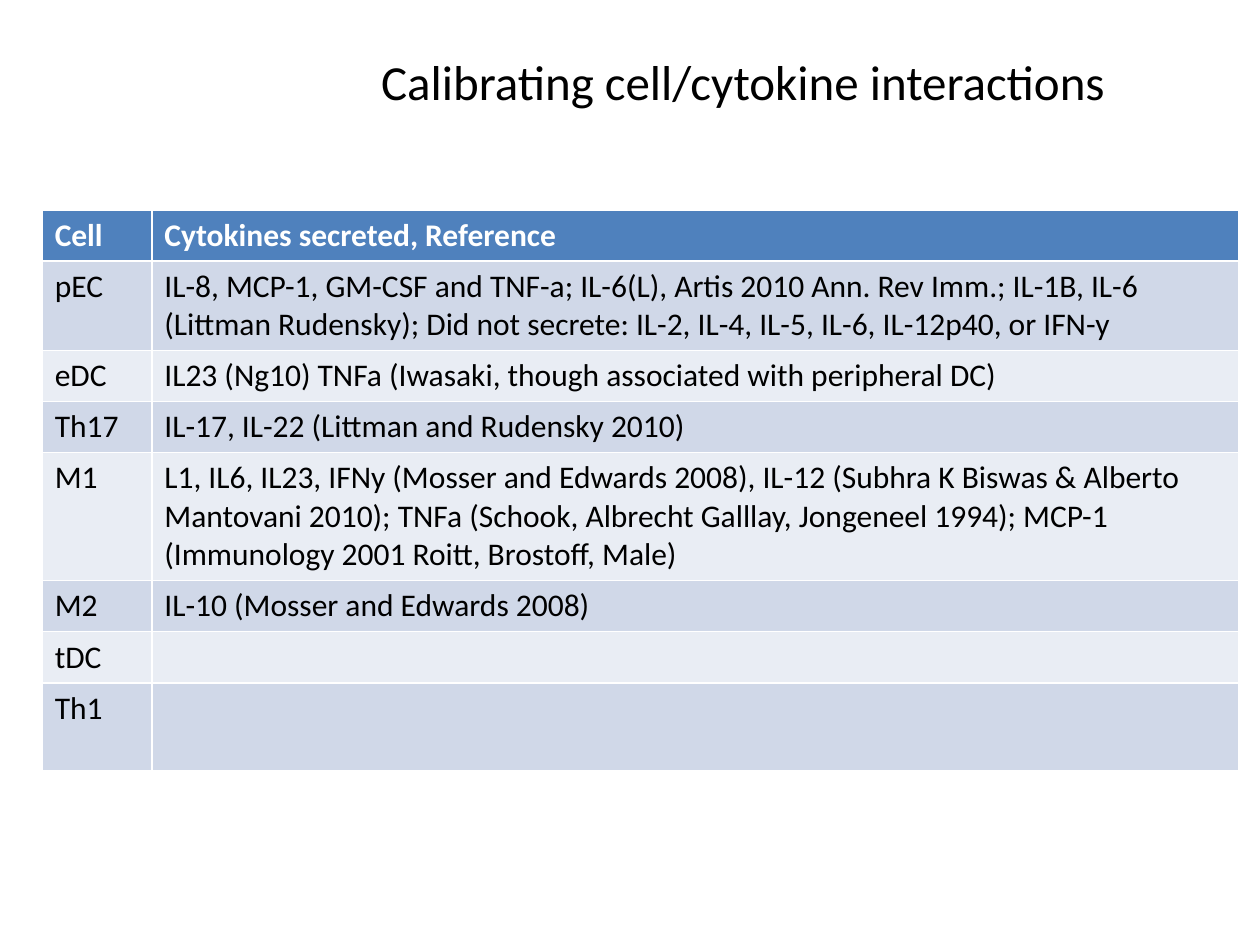
import pptx
import pptx.util
import pptx.dml.color
import pptx.enum.text

Cm = pptx.util.Cm
BLACK = pptx.dml.color.RGBColor(0x00, 0x00, 0x00)
WHITE = pptx.dml.color.RGBColor(0xFF, 0xFF, 0xFF)
HEADER_BLUE = pptx.dml.color.RGBColor(0x4F, 0x81, 0xBD)
BAND_DARK = pptx.dml.color.RGBColor(0xD0, 0xD8, 0xE8)
BAND_LIGHT = pptx.dml.color.RGBColor(0xE9, 0xED, 0xF4)


def add_run(paragraph, text, size, color, bold=False):
    run = paragraph.add_run()
    run.text = text
    run.font.name = "Calibri"
    run.font.size = pptx.util.Pt(size)
    run.font.bold = bold
    run.font.color.rgb = color


presentation = pptx.Presentation()
presentation.slide_width = Cm(25.4)
presentation.slide_height = Cm(19.05)
slide = presentation.slides.add_slide(presentation.slide_layouts[5])

title = slide.shapes.title
title.left, title.top = Cm(4.55), Cm(0.05)
title.width, title.height = Cm(20.85), Cm(3.18)
title.text_frame.vertical_anchor = pptx.enum.text.MSO_ANCHOR.MIDDLE
title_paragraph = title.text_frame.paragraphs[0]
title_paragraph.alignment = pptx.enum.text.PP_ALIGN.CENTER
add_run(title_paragraph, "Calibrating cell/cytokine interactions", 28, BLACK)

rows = [
    (0.94, "Cell", "Cytokines secreted, Reference"),
    (1.6, "pEC", "IL-8, MCP-1, GM-CSF and TNF-a; IL-6(L), Artis 2010 Ann. Rev Imm.; "
     "IL-1B, IL-6 (Littman Rudensky); Did not secrete: IL-2, IL-4, IL-5, IL-6, "
     "IL-12p40, or IFN-y"),
    (0.94, "eDC", "IL23 (Ng10) TNFa (Iwasaki, though associated with peripheral DC)"),
    (0.94, "Th17", "IL-17, IL-22 (Littman and Rudensky 2010)"),
    (2.29, "M1", "L1, IL6, IL23, IFNy (Mosser and Edwards 2008), IL-12 (Subhra K Biswas "
     "& Alberto Mantovani 2010); TNFa (Schook, Albrecht Galllay, Jongeneel 1994); "
     "MCP-1 (Immunology 2001 Roitt, Brostoff, Male)"),
    (0.94, "M2", "IL-10 (Mosser and Edwards 2008)"),
    (0.94, "tDC", ""),
    (1.78, "Th1", ""),
]

table_height = sum(row[0] for row in rows)
table = slide.shapes.add_table(
    len(rows), 2, Cm(0.85), Cm(4.23), Cm(24.13), Cm(table_height)
).table
table.columns[0].width = Cm(2.21)
table.columns[1].width = Cm(21.92)

for row_index, (height, *texts) in enumerate(rows):
    table.rows[row_index].height = Cm(height)
    is_header = row_index == 0
    band = BAND_DARK if row_index % 2 else BAND_LIGHT
    for column_index, text in enumerate(texts):
        cell = table.cell(row_index, column_index)
        cell.fill.solid()
        cell.fill.fore_color.rgb = HEADER_BLUE if is_header else band
        paragraph = cell.text_frame.paragraphs[0]
        if text:
            add_run(paragraph, text, 18, WHITE if is_header else BLACK, is_header)
        else:
            paragraph.font.size = pptx.util.Pt(18)

presentation.save("out.pptx")
